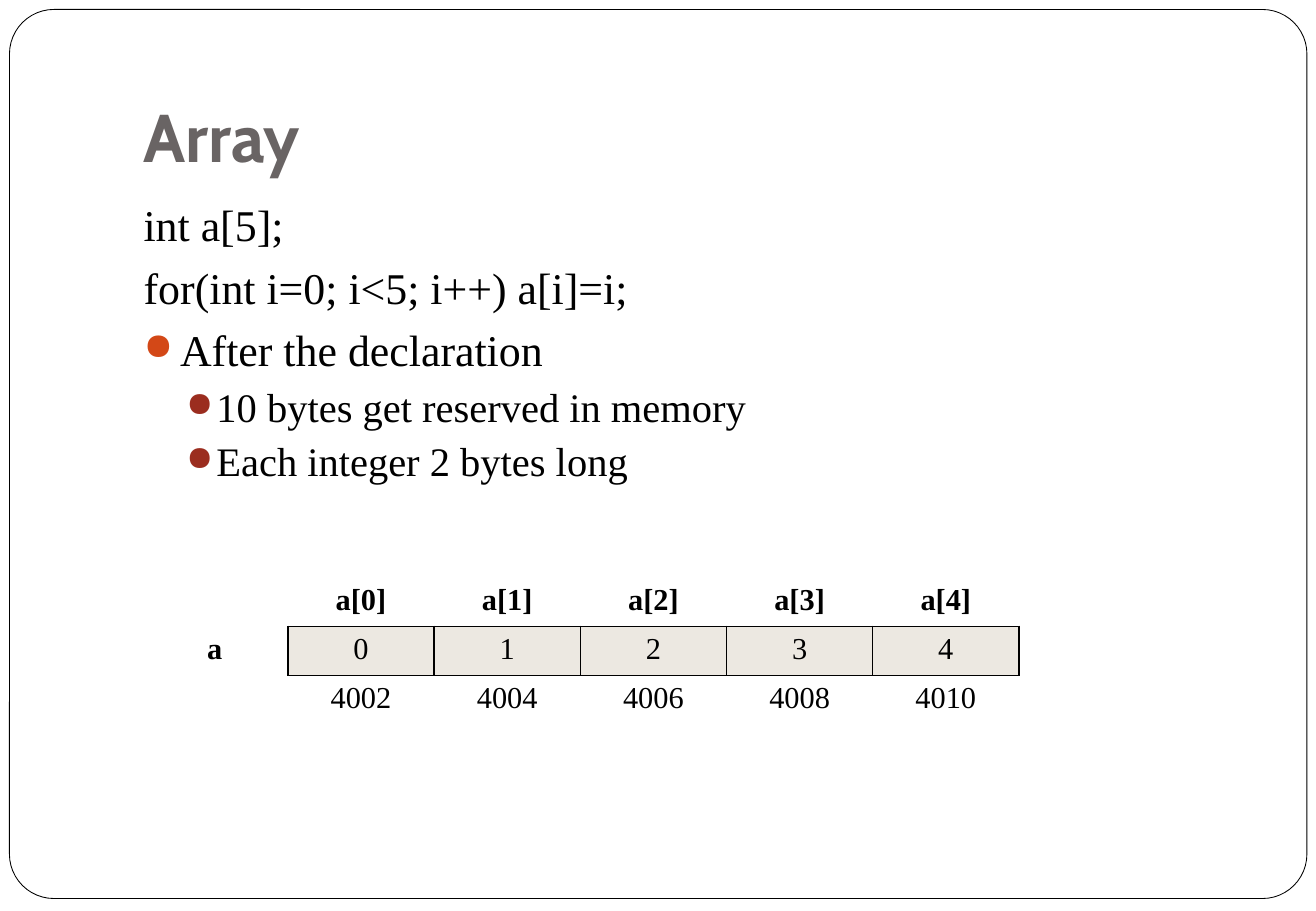
from dataclasses import dataclass

from lxml import etree
from pptx import Presentation
from pptx.dml.color import RGBColor
from pptx.enum.shapes import MSO_SHAPE
from pptx.enum.text import MSO_ANCHOR, MSO_AUTO_SIZE, PP_ALIGN
from pptx.oxml.ns import qn
from pptx.util import Pt

ROUND = MSO_SHAPE.ROUNDED_RECTANGLE
BOTTOM = MSO_ANCHOR.BOTTOM
FIXED = MSO_AUTO_SIZE.NONE
LEFT, CENTER = PP_ALIGN.LEFT, PP_ALIGN.CENTER
SERIF = "Times New Roman"
BLACK, WHITE, GREY = "000000", "FFFFFF", "696464"
ORANGE, RED, TAN = "D34817", "9B2D1F", "A28E6A"
SIDES = "LRTB"


@dataclass
class Line:
    text: str
    size: float = 26
    space: float = 5.8
    level: int = 0
    margin: float = 0
    hang: float = 0
    bullet: str = ""


@dataclass
class Row:
    head: str
    texts: list[str]
    edges: str
    head_edges: str = ""
    bold: bool = False
    shade: bool = False


LINES = [
    Line("int a[5];"),
    Line("for(int i=0; i<5; i++) a[i]=i;"),
    Line("After the declaration", margin=21.6, hang=21.6, bullet=ORANGE),
    Line("10 bytes get reserved in memory", 24, 3.7, 1, 43.2, 18, RED),
    Line("Each integer 2 bytes long", 24, 3.7, 1, 43.2, 18, RED),
]
COUNT = 5
ROWS = [
    Row("", [f"a[{i}]" for i in range(COUNT)], "B", bold=True),
    Row("a", [str(i) for i in range(COUNT)], SIDES, "R", shade=True),
    Row("", [str(4002 + 2 * i) for i in range(COUNT)], "T"),
]


def rgb(code: str) -> RGBColor:
    return RGBColor.from_string(code)


def place(shape, left: float, top: float, width: float, height: float) -> None:
    shape.left, shape.top = Pt(left), Pt(top)
    shape.width, shape.height = Pt(width), Pt(height)


def add_run(para, text: str, size: float, bold: bool = False,
            font: str = SERIF, color: str = BLACK) -> None:
    run = para.add_run()
    run.text = text
    run.font.name, run.font.size, run.font.bold = font, Pt(size), bold
    run.font.color.rgb = rgb(color)


def add_sub(parent, tag: str, **attrs: str):
    return etree.SubElement(parent, qn(f"a:{tag}"), attrs)


def add_line(para, line: Line) -> None:
    para.level = line.level
    para.space_before = Pt(line.space)
    add_run(para, line.text, line.size)
    if line.bullet:
        props = para._p.get_or_add_pPr()
        props.set("marL", str(Pt(line.margin)))
        props.set("indent", str(-Pt(line.hang)))
        add_sub(add_sub(props, "buClr"), "srgbClr", val=line.bullet)
        add_sub(props, "buSzPct", val="85000")
        add_sub(props, "buChar", char="●")


def fill_cell(cell, text: str, edges: str, bold: bool, shade: bool) -> None:
    props = cell._tc.get_or_add_tcPr()
    for side in SIDES:
        edge = add_sub(props, f"ln{side}", w=str(Pt(1)))
        if side in edges:
            add_sub(add_sub(edge, "solidFill"), "srgbClr", val=BLACK)
        else:
            add_sub(edge, "noFill")
    if shade:
        tint = add_sub(add_sub(props, "solidFill"), "srgbClr", val=TAN)
        add_sub(tint, "alpha", val="20000")
    else:
        cell.fill.background()
    if text:
        para = cell.text_frame.paragraphs[0]
        para.alignment = CENTER
        add_run(para, text, 18, bold)


def main() -> None:
    deck = Presentation()
    deck.slide_width, deck.slide_height = Pt(780), Pt(540)
    slide = deck.slides.add_slide(deck.slide_layouts[5])
    shapes = slide.shapes
    title = shapes.title

    # Frame, behind the title
    frame = shapes.add_shape(ROUND, Pt(5.6), Pt(5.6), Pt(769), Pt(527))
    frame.adjustments[0] = 0.05
    frame.shadow.inherit = False
    frame.fill.solid()
    frame.fill.fore_color.rgb = rgb(WHITE)
    frame.line.color.rgb = rgb(BLACK)
    frame.line.width = Pt(0.5)
    title.element.addprevious(frame.element)

    # Title
    place(title, 78, 21.6, 663, 90)
    box = title.text_frame
    box.auto_size = FIXED
    box.vertical_anchor = BOTTOM
    box.margin_bottom = Pt(7.2)
    box.paragraphs[0].alignment = LEFT
    add_run(box.paragraphs[0], "Array", 40, True, "Cabin", GREY)

    # Code and bullets
    body = shapes.add_textbox(Pt(78), Pt(113.8), Pt(663), Pt(360)).text_frame
    body.word_wrap = True
    for i, line in enumerate(LINES):
        add_line(body.add_paragraph() if i else body.paragraphs[0], line)

    # Memory table
    table = shapes.add_table(len(ROWS), COUNT + 1, Pt(84), Pt(342),
                             Pt(520), Pt(87.6)).table
    table.first_row = table.horz_banding = False
    for col in table.columns:
        col.width = Pt(86.67)
    for r, row in enumerate(ROWS):
        table.rows[r].height = Pt(29.2)
        fill_cell(table.cell(r, 0), row.head, row.head_edges, True, False)
        for c, text in enumerate(row.texts, 1):
            fill_cell(table.cell(r, c), text, row.edges, row.bold, row.shade)

    deck.save("out.pptx")


if __name__ == "__main__":
    main()
